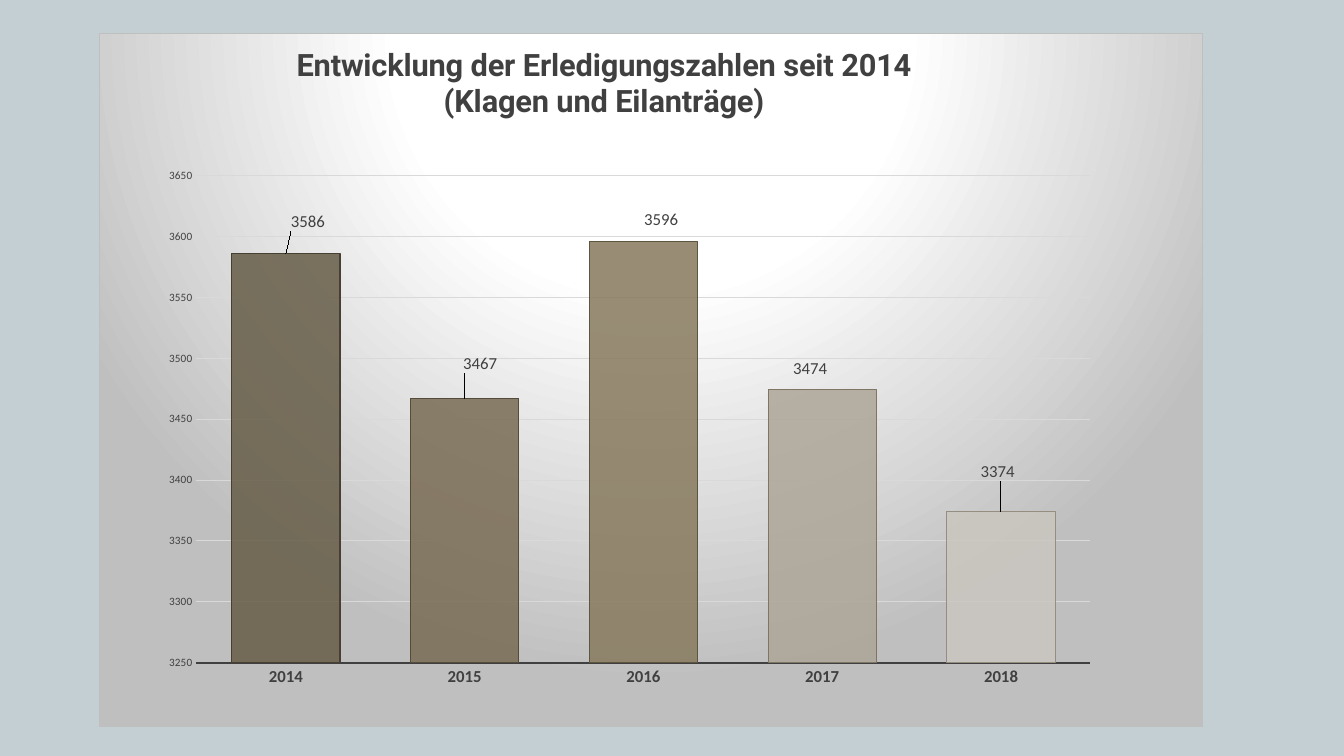
from dataclasses import dataclass

from lxml import etree
from pptx import Presentation
from pptx.chart.data import CategoryChartData
from pptx.dml.color import RGBColor
from pptx.enum import chart as ch
from pptx.oxml import parse_xml
from pptx.oxml.ns import nsdecls, qn
from pptx.util import Cm, Pt


@dataclass(frozen=True)
class Theme:
    background: str = "C3CFD3"
    ink: str = "404040"
    grid: str = "D9D9D9"
    white: str = "FFFFFF"
    frame: str = "BFBFBF"
    body_font: str = "Calibri"
    title_font: str = "Roboto"
    title_size: float = 22
    label_size: float = 12
    scale_size: float = 8
    bar_alpha: int = 85


@dataclass(frozen=True)
class Bar:
    """One year; dx and dy shift its label, as shares of the chart size."""
    year: str
    value: int
    color: str
    dx: float
    dy: float


THEME = Theme()
TITLE_LINES = ("Entwicklung der Erledigungszahlen seit 2014",
               "(Klagen und Eilanträge)")
BARS = (
    Bar("2014", 3586, "665C47", 0.02, -0.026),
    Bar("2015", 3467, "786B53", 0.014, -0.03),
    Bar("2016", 3596, "87795D", 0.016, -0.012),
    Bar("2017", 3474, "ADA598", -0.011, -0.01),
    Bar("2018", 3374, "CAC6BF", -0.003, -0.038),
)


def set_font(font, size: float, name: str = THEME.body_font,
             bold: bool = False) -> None:
    font.size, font.name, font.bold = Pt(size), name, bold
    font.color.rgb = RGBColor.from_string(THEME.ink)


def add_text(p, text: str, **font_format) -> None:
    r = p.add_run()
    r.text = text
    set_font(r.font, **font_format)


def set_line(line, color: str, width: float) -> None:
    line.color.rgb = RGBColor.from_string(color)
    line.width = Pt(width)


def set_layout(parent, index: int, **values) -> None:
    """Give a chart part a manual layout, as child number index."""
    for old in parent.findall(qn("c:layout")):
        parent.remove(old)
    layout = parse_xml(f"<c:layout {nsdecls('c')}><c:manualLayout/></c:layout>")
    for tag, value in values.items():
        etree.SubElement(layout[0], qn(f"c:{tag}")).set("val", str(value))
    parent.insert(index, layout)


def fill_chart_area(chart) -> None:
    stops = "".join(
        f'<a:gs pos="{pos}"><a:srgbClr val="{color}"/></a:gs>'
        for pos, color in ((0, THEME.white), (39000, THEME.white),
                           (100000, THEME.frame)))
    sp_pr = parse_xml(
        f'<c:spPr {nsdecls("c", "a")}><a:gradFill><a:gsLst>{stops}</a:gsLst>'
        '<a:path path="circle"><a:fillToRect l="50000" t="-80000" r="50000" '
        'b="180000"/></a:path></a:gradFill><a:ln w="9525"><a:solidFill>'
        f'<a:srgbClr val="{THEME.frame}"/></a:solidFill></a:ln></c:spPr>')
    chart.element.find(qn("c:chart")).addnext(sp_pr)


def add_title(chart) -> None:
    tf = chart.chart_title.text_frame
    for i, line in enumerate(TITLE_LINES):
        p = tf.add_paragraph() if i else tf.paragraphs[0]
        add_text(p, line, size=THEME.title_size, name=THEME.title_font,
                 bold=True)
    title = chart.element.find(".//" + qn("c:title"))
    set_layout(title, 1, xMode="edge", yMode="edge", x=0.176, y=0.014)
    title.find(qn("c:overlay")).set("val", "1")


def format_axes(chart) -> None:
    years, scale = chart.category_axis, chart.value_axis
    for axis in (years, scale):
        axis.major_tick_mark = axis.minor_tick_mark = ch.XL_TICK_MARK.NONE
    set_font(years.tick_labels.font, THEME.label_size, bold=True)
    set_line(years.format.line, THEME.ink, 1.5)
    set_font(scale.tick_labels.font, THEME.scale_size)
    scale.format.line.fill.background()
    scale.minimum_scale, scale.maximum_scale = 3250, 3650
    scale.major_unit = 50
    set_line(scale.major_gridlines.format.line, THEME.grid, 0.75)


def format_bar(point, bar: Bar) -> None:
    fill, line = point.format.fill, point.format.line
    fill.solid()
    fill.fore_color.rgb = RGBColor.from_string(bar.color)
    color = point.format.fill._xPr.find(".//" + qn("a:srgbClr"))
    etree.SubElement(color, qn("a:alpha")).set(
        "val", str(THEME.bar_alpha * 1000))
    set_line(line, bar.color, 0.75)
    line.color.brightness = -0.3
    label = point.data_label
    set_font(label.font, THEME.label_size)
    label.position = ch.XL_LABEL_POSITION.OUTSIDE_END


def add_bar_chart(slide) -> None:
    data = CategoryChartData()
    data.categories = [bar.year for bar in BARS]
    data.add_series("Series 1", [bar.value for bar in BARS])
    chart = slide.shapes.add_chart(
        ch.XL_CHART_TYPE.COLUMN_CLUSTERED,
        Cm(2.49), Cm(0.84), Cm(27.84), Cm(17.48), data).chart
    chart.has_legend = False
    set_font(chart.font, 10)
    fill_chart_area(chart)
    add_title(chart)
    format_axes(chart)
    set_layout(chart.element.find(".//" + qn("c:plotArea")), 0,
               layoutTarget="inner", xMode="edge", yMode="edge",
               x=0.088, y=0.205, w=0.81, h=0.703)

    plot = chart.plots[0]
    plot.gap_width, plot.vary_by_categories = 65, False
    series = plot.series[0]
    series.data_labels.show_value = True
    set_font(series.data_labels.font, THEME.label_size)
    for i, bar in enumerate(BARS):
        format_bar(series.points[i], bar)
    for label, bar in zip(chart.element.iter(qn("c:dLbl")), BARS):
        set_layout(label, 1, x=bar.dx, y=bar.dy)


def main() -> None:
    prs = Presentation()
    prs.slide_width, prs.slide_height = Cm(33.87), Cm(19.05)
    slide = prs.slides.add_slide(prs.slide_layouts[6])
    fill = slide.background.fill
    fill.solid()
    fill.fore_color.rgb = RGBColor.from_string(THEME.background)
    add_bar_chart(slide)
    prs.save("out.pptx")


if __name__ == "__main__":
    main()
